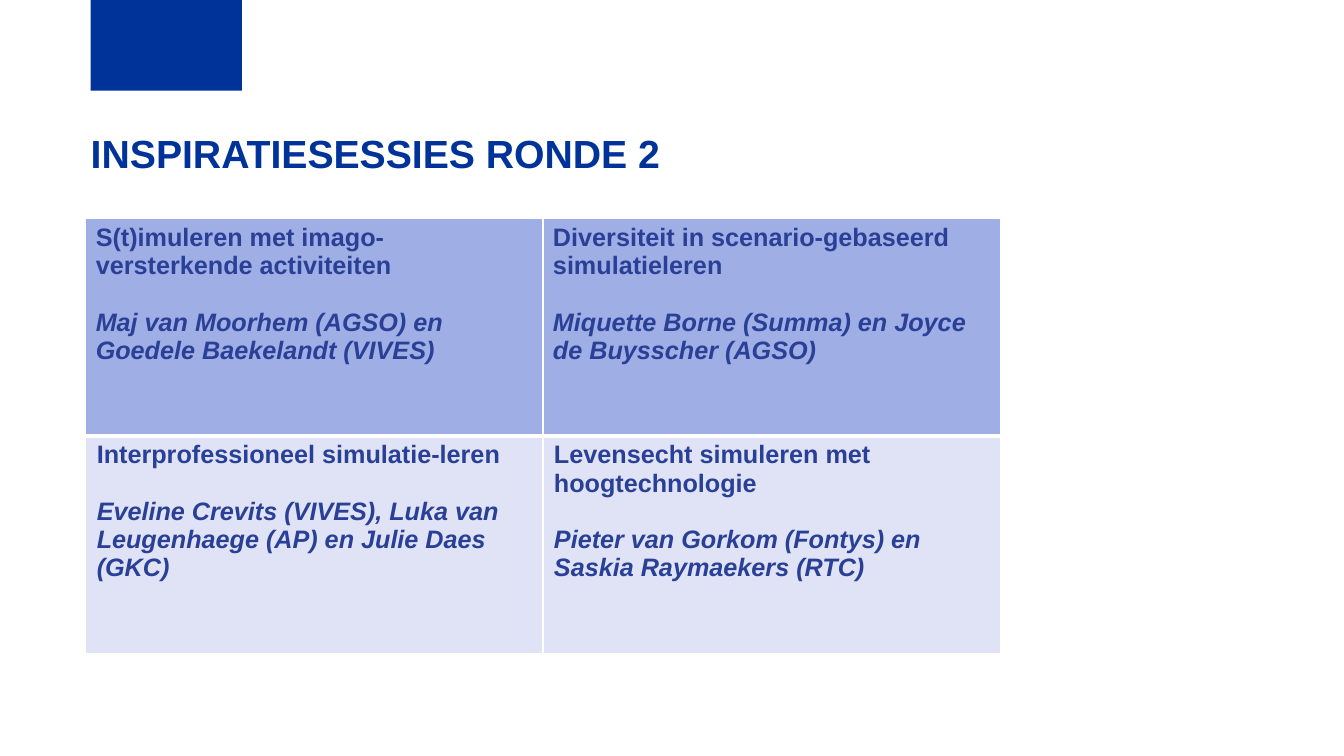
from dataclasses import dataclass

from lxml.etree import SubElement
from pptx import Presentation
from pptx.dml.color import RGBColor
from pptx.enum.shapes import MSO_SHAPE as Shape
from pptx.enum.text import MSO_ANCHOR as Anchor, MSO_AUTO_SIZE as AutoSize, PP_ALIGN as Align
from pptx.oxml.ns import qn
from pptx.slide import Slide
from pptx.table import _Cell as Cell
from pptx.text.text import _Paragraph as Paragraph
from pptx.util import Inches, Pt

WIDTH, HEIGHT = Inches(13.33), Inches(7.5)
COLORS = {
    "brand": "003399",
    "text": "294096",
    "top row": "9FAEE5",
    "bottom row": "DFE3F5",
    "border": "FFFFFF",
}


@dataclass(frozen=True)
class Area:
    """A rectangle in shares of the slide's width and height."""
    left: float
    top: float
    width: float
    height: float

    def lengths(self) -> tuple[int, int, int, int]:
        return (int(self.left * WIDTH), int(self.top * HEIGHT),
                int(self.width * WIDTH), int(self.height * HEIGHT))


@dataclass(frozen=True)
class Session:
    topic: str
    speakers: str


@dataclass(frozen=True)
class Row:
    fill: str
    side_inset: float
    top_border: int
    bottom_border: int
    sessions: tuple[Session, ...]


BLOCK = Area(0.9 / 13.33, 0, 1.5 / 13.33, 0.12)
TITLE = Area(0.9 / 13.33, 1.34 / 7.5, 7.66 / 13.33, 1.18 / 7.5)
TABLE = Area(0.85 / 13.33, 2.17 / 7.5, 9.07 / 13.33, 4.31 / 7.5)
ROWS = (
    Row("top row", 0.1, 1, 3, (
        Session("S(t)imuleren met imago-versterkende activiteiten",
                "Maj van Moorhem (AGSO) en Goedele Baekelandt (VIVES)"),
        Session("Diversiteit in scenario-gebaseerd simulatieleren",
                "Miquette Borne (Summa) en Joyce de Buysscher (AGSO)"),
    )),
    Row("bottom row", 0.11, 3, 1, (
        Session("Interprofessioneel simulatie-leren",
                "Eveline Crevits (VIVES), Luka van Leugenhaege (AP) en Julie Daes (GKC)"),
        Session("Levensecht simuleren met hoogtechnologie",
                "Pieter van Gorkom (Fontys) en Saskia Raymaekers (RTC)"),
    )),
)


def color(name: str) -> RGBColor:
    return RGBColor.from_string(COLORS[name])


def write(para: Paragraph, text: str, size: int, color_name: str, italic: bool = False) -> None:
    para.text = text
    para.alignment = Align.LEFT
    for span in para.runs:
        span.font.name = "Arial"
        span.font.size = Pt(size)
        span.font.bold = True
        span.font.italic = italic
        span.font.color.rgb = color(color_name)


def draw_block(page: Slide) -> None:
    block = page.shapes.add_shape(Shape.RECTANGLE, *BLOCK.lengths())
    block.shadow.inherit = False
    block.fill.solid()
    block.fill.fore_color.rgb = color("brand")
    block.line.fill.background()


def draw_title(page: Slide) -> None:
    title = page.shapes.title
    title.left, title.top, title.width, title.height = TITLE.lengths()
    frame = title.text_frame
    frame.margin_left = frame.margin_top = frame.margin_right = frame.margin_bottom = 0
    frame.vertical_anchor = Anchor.TOP
    frame.auto_size = AutoSize.NONE
    frame.word_wrap = True
    para = frame.paragraphs[0]
    write(para, "INSPIRATIESESSIES RONDE 2", 28, "brand")
    para.line_spacing = 0.9


def set_borders(cell: Cell, row: Row) -> None:
    widths = {"lnL": 1, "lnR": 1, "lnT": row.top_border, "lnB": row.bottom_border}
    properties = cell._tc.get_or_add_tcPr()
    for side, width in widths.items():
        line = SubElement(properties, qn(f"a:{side}"), w=str(Pt(width)))
        fill = SubElement(line, qn("a:solidFill"))
        SubElement(fill, qn("a:srgbClr"), val=COLORS["border"])


def fill_cell(cell: Cell, row: Row, session: Session) -> None:
    set_borders(cell, row)
    cell.fill.solid()
    cell.fill.fore_color.rgb = color(row.fill)
    cell.margin_left = cell.margin_right = Inches(row.side_inset)
    cell.margin_top = cell.margin_bottom = Inches(0.05)
    frame = cell.text_frame
    write(frame.paragraphs[0], session.topic, 18, "text")
    speakers = frame.add_paragraph()
    write(speakers, session.speakers, 18, "text", italic=True)
    speakers.space_before = Pt(20)


def draw_table(page: Slide) -> None:
    columns = len(ROWS[0].sessions)
    table = page.shapes.add_table(len(ROWS), columns, *TABLE.lengths()).table
    table.first_row = table.horz_banding = False
    for row_index, row in enumerate(ROWS):
        for column_index, session in enumerate(row.sessions):
            fill_cell(table.cell(row_index, column_index), row, session)


def main() -> None:
    deck = Presentation()
    deck.slide_width, deck.slide_height = WIDTH, HEIGHT
    page = deck.slides.add_slide(deck.slide_layouts.get_by_name("Title Only"))
    draw_block(page)
    draw_title(page)
    draw_table(page)
    deck.save("out.pptx")


if __name__ == "__main__":
    main()
